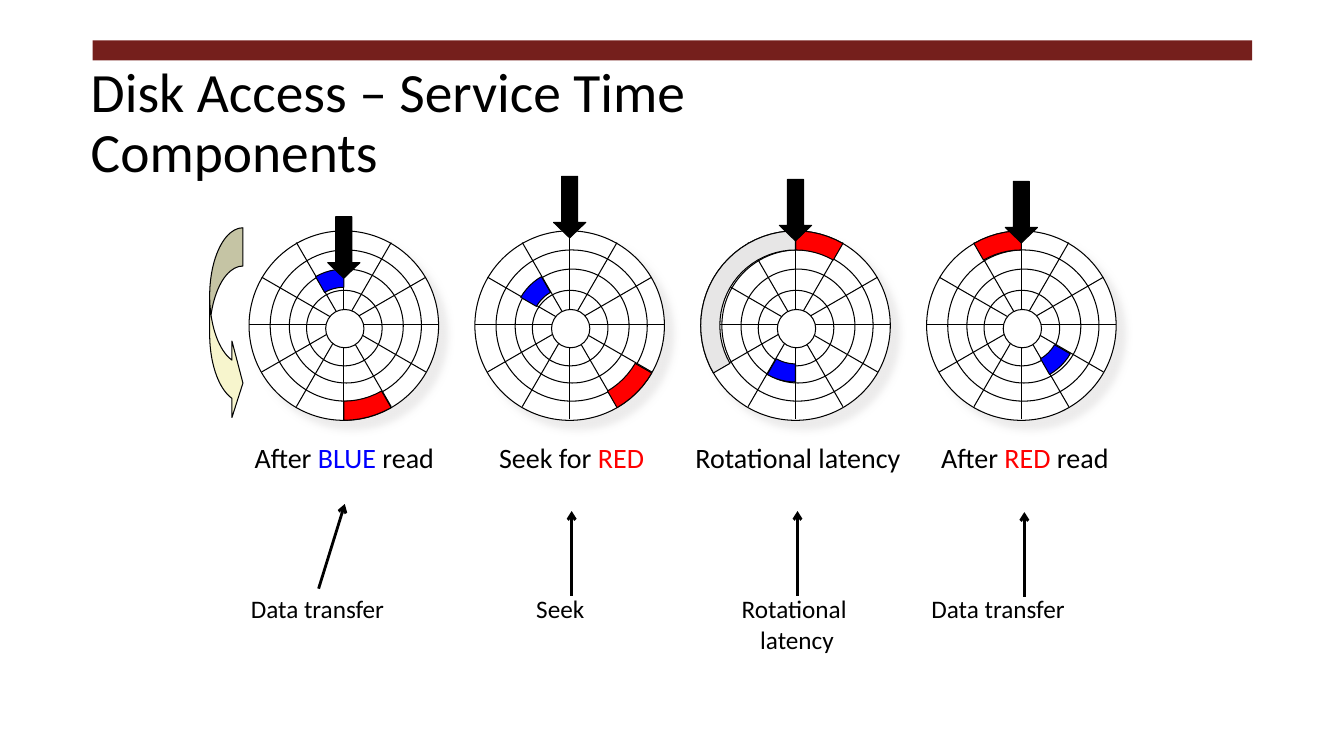
import math

import pptx
import pptx.dml.color
import pptx.enum.shapes
import pptx.enum.text
import pptx.oxml
import pptx.oxml.ns
import pptx.util

PX = 9144  # 100 px to the inch
SHAPE = pptx.enum.shapes.MSO_SHAPE
ALIGN = pptx.enum.text.PP_ALIGN
ANCHOR = pptx.enum.text.MSO_ANCHOR
BLACK, WHITE, BLUE, RED, GRAY = "000000", "FFFFFF", "0000FF", "FF0000", "E7E6E6"

# Disk rings, outermost first: x and y from the disk's corner, then diameter
RINGS = [(0, 0, 188), (21, 19, 150), (40, 38, 113), (57, 59, 75)]
HUB = (76, 78, 38)
OUTER_TRACK, INNER_TRACK = (94, 75), (56, 38)  # outer and inner radius

# Per disk: top of the head, sectors (colour, track, degrees clockwise from top),
# caption box (left, width) and caption runs
DISKS = [
    (215, [(BLUE, INNER_TRACK, -30, 0), (RED, OUTER_TRACK, 150, 180)],
     (225, 233), [("After ", BLACK), ("BLUE ", BLUE), ("read", BLACK)]),
    (175, [(RED, OUTER_TRACK, 120, 150), (BLUE, INNER_TRACK, -60, -30)],
     (467, 200), [("Seek for ", BLACK), ("RED", RED)]),
    (178, [(RED, OUTER_TRACK, 0, 30), (BLUE, INNER_TRACK, 180, 210),
           (GRAY, OUTER_TRACK, 240, 360)],
     (658, 267), [("Rotational latency", BLACK)]),
    (180, [(RED, OUTER_TRACK, -30, 0), (BLUE, INNER_TRACK, 120, 150)],
     (900, 233), [("After ", BLACK), ("RED", RED), (" read", BLACK)]),
]

# Per label: box, lines, wrap, arrow from and to
LABELS = [
    ((239, 584, 154, 40), ["Data transfer"], False, (316, 584, 342, 500)),
    ((522, 584, 68, 40), ["Seek"], False, (567, 591, 567, 507)),
    ((700, 584, 181, 71), ["Rotational ", "latency"], True, (791, 591, 791, 507)),
    ((914, 584, 154, 40), ["Data transfer"], False, (1016, 592, 1016, 508)),
]


def px(*values):
    return [round(v * PX) for v in values]


def rgb(value):
    return pptx.dml.color.RGBColor.from_string(value)


def apply(obj, values):
    for name, value in values.items():
        setattr(obj, name, value)


def add_xml(parent, xml):
    ns = pptx.oxml.ns.nsdecls("a")
    parent.append(pptx.oxml.parse_xml(xml.replace(">", f" {ns}>", 1)))


def paint(sp, fill, line=BLACK):
    sp.shadow.inherit = False
    sp.fill.solid()
    sp.fill.fore_color.rgb = rgb(fill)
    if line:
        sp.line.color.rgb = rgb(line)
        sp.line.width = pptx.util.Pt(0.75)
    else:
        sp.line.fill.background()
    return sp


def add_line(shapes, ends, width):
    cxn = shapes.add_connector(pptx.enum.shapes.MSO_CONNECTOR.STRAIGHT, *px(*ends))
    cxn.line.color.rgb = rgb(BLACK)
    cxn.line.width = pptx.util.Pt(width)
    return cxn


def write(p, runs, size, align):
    p.alignment = align
    for text, color in runs:
        r = p.add_run()
        r.text = text
        apply(r.font, {"name": "Calibri", "size": pptx.util.Pt(size)})
        r.font.color.rgb = rgb(color)


def add_text(s, box, paragraphs, size, align=ALIGN.CENTER, wrap=True):
    tf = s.shapes.add_textbox(*px(*box)).text_frame
    tf.word_wrap = wrap
    for i, runs in enumerate(paragraphs):
        write(tf.add_paragraph() if i else tf.paragraphs[0], runs, size, align)


def add_header(s, box):
    left, top, width, height = box
    paint(s.shapes.add_shape(SHAPE.RECTANGLE, *px(left, top, width, height)), "751F1C", None)
    title = s.shapes.title
    names = ("left", "top", "width", "height")
    apply(title, dict(zip(names, px(left - 12, top + 42, 885, 83))))
    tf = title.text_frame
    apply(tf, {"vertical_anchor": ANCHOR.MIDDLE, "word_wrap": True,
               "auto_size": pptx.enum.text.MSO_AUTO_SIZE.NONE})
    write(tf.paragraphs[0], [("Disk Access – Service Time Components", BLACK)], 39.6, ALIGN.LEFT)
    tf.paragraphs[0].line_spacing = 0.9


def add_sector(shapes, cx, cy, color, track, start, end):
    def arc(radius, angles):
        return [(cx + radius * math.sin(math.radians(a)),
                 cy - radius * math.cos(math.radians(a))) for a in angles]

    angles = range(start, end + 1, 5)
    outer, inner = track
    points = arc(outer, angles) + arc(inner, reversed(angles))
    fb = shapes.build_freeform(*px(*points[0]), scale=1.0)
    fb.add_line_segments([px(*pt) for pt in points[1:]], close=True)
    paint(fb.convert_to_shape(), color)


def add_disk(s, left, top, head_top, sectors):
    shapes = s.shapes.add_group_shape().shapes

    def circle(x, y, d):
        return paint(shapes.add_shape(SHAPE.OVAL, *px(left + x, top + y, d, d)), WHITE)

    # Platter with its soft shadow, then the tracks
    platter = [circle(*ring) for ring in RINGS][0]
    add_xml(platter._element.spPr.find(pptx.oxml.ns.qn("a:effectLst")),
            '<a:outerShdw blurRad="63500" dist="107950" dir="2700000" algn="ctr" rotWithShape="0">'
            f'<a:srgbClr val="{GRAY}"><a:alpha val="75000"/></a:srgbClr></a:outerShdw>')

    # Spokes every 30 degrees
    cx, cy, radius = left + 94, top + 93, 94
    for angle in range(0, 180, 30):
        dx = radius * math.sin(math.radians(angle))
        dy = radius * math.cos(math.radians(angle))
        spoke = add_line(shapes, (cx + dx, cy - dy, cx - dx, cy + dy), 0.75)
        add_xml(spoke._element.spPr, "<a:effectLst></a:effectLst>")
    circle(*HUB)

    # Sectors and read head
    for sector in sectors:
        add_sector(shapes, cx, cy + 1, *sector)
    head = paint(shapes.add_shape(SHAPE.DOWN_ARROW, *px(cx - 16, head_top, 32, 61)), BLACK)
    head.adjustments[1] = 0.48


def add_rotation_arrow(s, box):
    sp = paint(s.shapes.add_shape(SHAPE.CURVED_RIGHT_ARROW, *px(*box)), "F7F5CD")
    for i, value in enumerate((1.15, 2.3, 0.33)):
        sp.adjustments[i] = value


def add_label(s, box, lines, wrap, ends):
    align = ALIGN.CENTER if wrap else ALIGN.LEFT
    add_text(s, box, [[(line, BLACK)] for line in lines], 18, align, wrap)
    arrow = add_line(s.shapes, ends, 2)
    add_xml(arrow.line._get_or_add_ln(), '<a:tailEnd type="arrow"></a:tailEnd>')
    add_xml(arrow._element.spPr, "<a:effectLst></a:effectLst>")


def main():
    prs = pptx.Presentation()
    prs.slide_width, prs.slide_height = px(1333, 750)
    s = prs.slides.add_slide(prs.slide_layouts[5])
    add_header(s, (92, 40, 1150, 20))
    for i, (head_top, sectors, (left, width), caption) in enumerate(DISKS):
        add_text(s, (left, 432, width, 43), [caption], 20)
        add_disk(s, 247 + 224 * i, 229, head_top, sectors)
    add_rotation_arrow(s, (208, 226, 33, 192))
    for label in LABELS:
        add_label(s, *label)
    prs.save("out.pptx")


if __name__ == "__main__":
    main()
